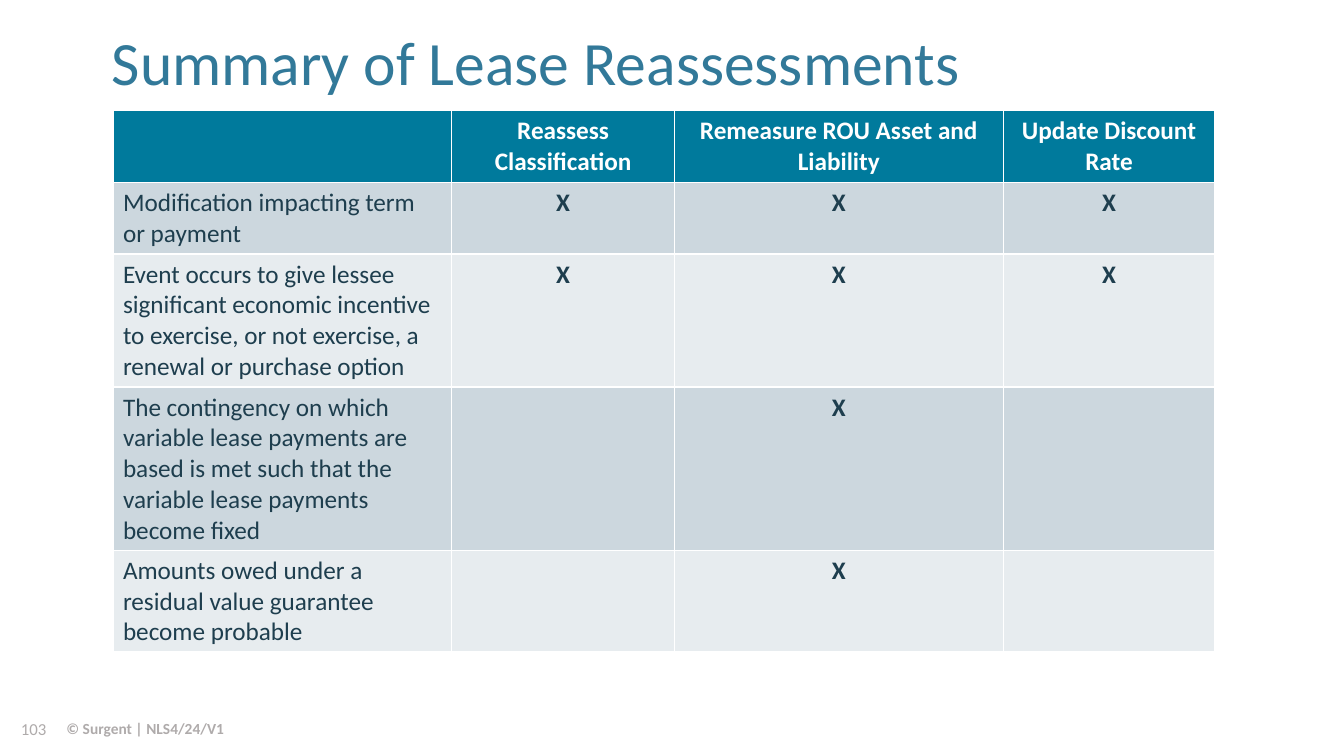
"""Build the lease reassessment summary slide."""
from pptx import Presentation
from pptx.dml.color import RGBColor
from pptx.enum.text import MSO_ANCHOR, PP_ALIGN
from pptx.util import Emu, Pt

EMU_PER_PX = 9144
FONT = "Calibri"
LEFT, CENTER, RIGHT = PP_ALIGN.LEFT, PP_ALIGN.CENTER, PP_ALIGN.RIGHT
MIDDLE = MSO_ANCHOR.MIDDLE

TITLE_BLUE = RGBColor(0x32, 0x79, 0x99)
HEADER_TEAL = RGBColor(0x00, 0x7A, 0x9C)
BAND_DARK = RGBColor(0xCC, 0xD7, 0xDE)
BAND_LIGHT = RGBColor(0xE7, 0xEC, 0xEF)
BODY_NAVY = RGBColor(0x1E, 0x3E, 0x4E)
FOOTER_GRAY = RGBColor(0xAF, 0xAB, 0xAB)
WHITE = RGBColor(0xFF, 0xFF, 0xFF)

COLUMN_WIDTHS = (336, 221, 326, 210)
ROW_HEIGHTS = (71, 71, 132, 162, 101)
HEADINGS = ("", "Reassess Classification", "Remeasure ROU Asset and Liability",
            "Update Discount Rate")
REASSESSMENTS = (
    ("Modification impacting term or payment", "X", "X", "X"),
    ("Event occurs to give lessee significant economic incentive to exercise, "
     "or not exercise, a renewal or purchase option", "X", "X", "X"),
    ("The contingency on which variable lease payments are based is met such "
     "that the variable lease payments become fixed", "", "X", ""),
    ("Amounts owed under a residual value guarantee become probable",
     "", "X", ""),
)


def px(length):
    """Turn pixels into EMU."""
    return Emu(length * EMU_PER_PX)


def write(paragraph, text, size, color, bold=False, align=LEFT):
    """Add one styled run to a paragraph."""
    paragraph.alignment = align
    run = paragraph.add_run()
    run.text = text
    run.font.name = FONT
    run.font.size = Pt(size)
    run.font.bold = bold
    run.font.color.rgb = color


def add_label(slide, box, text, size, color, bold=False, align=LEFT, spacing=1.0):
    """Add a vertically centred line of text."""
    frame = slide.shapes.add_textbox(*map(px, box)).text_frame
    frame.word_wrap = True
    frame.vertical_anchor = MIDDLE
    paragraph = frame.paragraphs[0]
    paragraph.line_spacing = spacing
    write(paragraph, text, size, color, bold, align)


def fill_row(cells, texts, fill, color, bold_first):
    """Fill one table row, leaving blank cells without a run."""
    for column, (cell, text) in enumerate(zip(cells, texts)):
        cell.fill.solid()
        cell.fill.fore_color.rgb = fill
        if text:
            write(cell.text_frame.paragraphs[0], text, 18, color,
                  bold=bold_first or column > 0,
                  align=CENTER if column else LEFT)


def add_reassessment_table(slide):
    """Add the banded table of triggers and required actions."""
    table = slide.shapes.add_table(
        len(ROW_HEIGHTS), len(COLUMN_WIDTHS), px(112), px(110),
        px(sum(COLUMN_WIDTHS)), px(sum(ROW_HEIGHTS))).table
    for column, width in zip(table.columns, COLUMN_WIDTHS):
        column.width = px(width)
    for row, height in zip(table.rows, ROW_HEIGHTS):
        row.height = px(height)
    header, *body = table.rows
    fill_row(header.cells, HEADINGS, HEADER_TEAL, WHITE, True)
    for index, (row, texts) in enumerate(zip(body, REASSESSMENTS)):
        band = BAND_LIGHT if index % 2 else BAND_DARK
        fill_row(row.cells, texts, band, BODY_NAVY, False)


def main():
    """Assemble and save the slide."""
    deck = Presentation()
    deck.slide_width, deck.slide_height = px(1333), px(750)
    slide = deck.slides.add_slide(deck.slide_layouts[6])
    add_label(slide, (101, 37, 1175, 62), "Summary of Lease Reassessments",
              44, TITLE_BLUE, spacing=0.75)
    add_reassessment_table(slide)
    add_label(slide, (56, 703, 211, 40), "© Surgent | NLS4/24/V1",
              11, FOOTER_GRAY, bold=True)
    add_label(slide, (0, 703, 56, 40), "103", 12, FOOTER_GRAY, align=RIGHT)
    deck.save("out.pptx")


if __name__ == "__main__":
    main()
